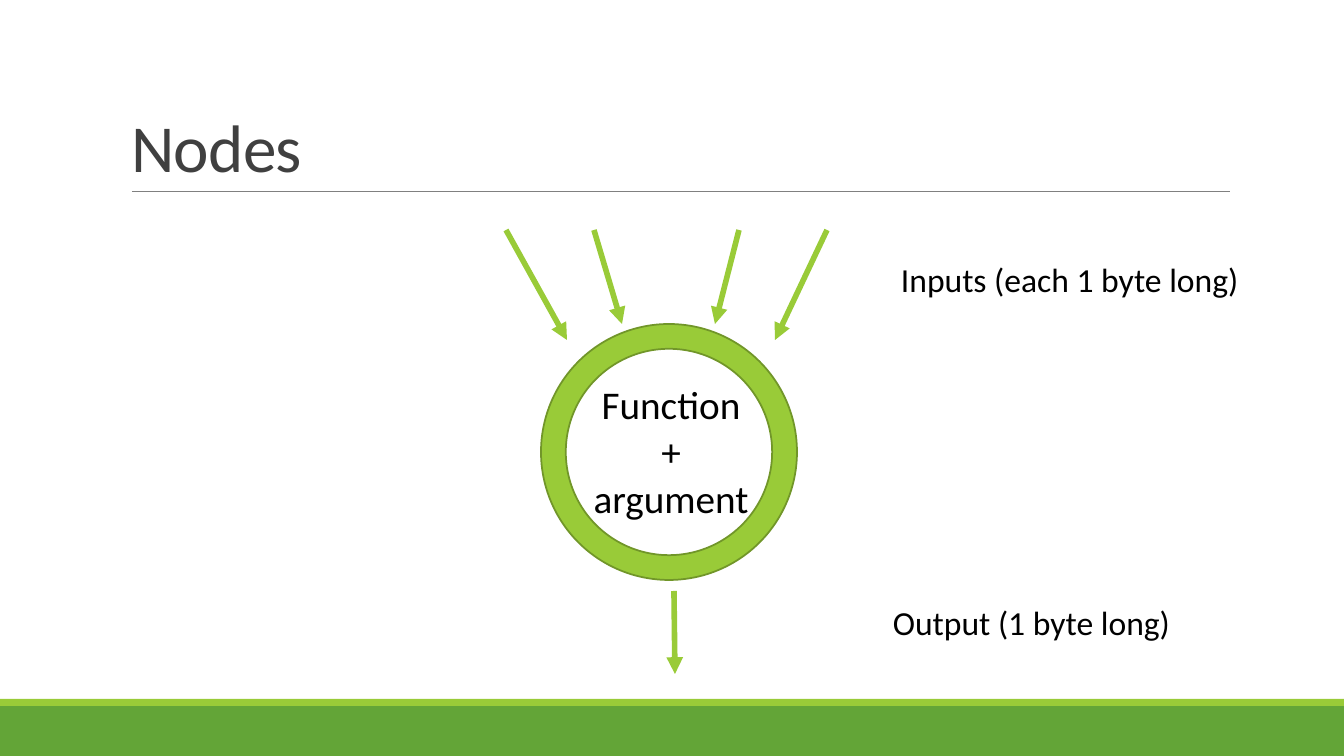
from lxml.etree import SubElement
from pptx import Presentation
from pptx.dml.color import RGBColor
from pptx.enum.shapes import MSO_CONNECTOR, MSO_SHAPE
from pptx.enum.text import MSO_ANCHOR, MSO_AUTO_SIZE, PP_ALIGN
from pptx.oxml.ns import qn
from pptx.util import Pt

EMU_PER_PX = 914400 / 100.8
WIDTH, HEIGHT = 1344, 756
GREEN = RGBColor(0x63, 0xA5, 0x37)
LIME = RGBColor(0x99, 0xCB, 0x38)
OLIVE = RGBColor(0x71, 0x96, 0x29)
GRAY = RGBColor(0x80, 0x80, 0x80)
CHARCOAL = RGBColor(0x40, 0x40, 0x40)
BLACK = RGBColor(0, 0, 0)


def px(*lengths):
    return [round(length * EMU_PER_PX) for length in lengths]


def write_text(frame, text, size, color=BLACK, align=PP_ALIGN.LEFT,
               line_spacing=None, tracking=None):
    frame.text = text
    for paragraph in frame.paragraphs:
        paragraph.alignment = align
        paragraph.line_spacing = line_spacing
        for run in paragraph.runs:
            run.font.name = "Calibri"
            run.font.size = Pt(size)
            run.font.color.rgb = color
            if tracking is not None:
                run.font._element.set("spc", str(round(tracking * 100)))


class NodeSlide:
    """Draws styled elements on one title-only slide."""

    def __init__(self, presentation):
        self.slide = presentation.slides.add_slide(presentation.slide_layouts[5])
        self.shapes = self.slide.shapes

    def title(self, text, left, top, width, height):
        title = self.shapes.title
        title.left, title.top, title.width, title.height = px(left, top, width, height)
        frame = title.text_frame
        frame.word_wrap = True
        frame.auto_size = MSO_AUTO_SIZE.NONE
        frame.vertical_anchor = MSO_ANCHOR.BOTTOM
        write_text(frame, text, 48, color=CHARCOAL, line_spacing=0.85, tracking=-0.5)

    def shape(self, kind, left, top, width, height, fill, outline=None):
        shape = self.shapes.add_shape(kind, *px(left, top, width, height))
        shape.shadow.inherit = False
        shape.fill.solid()
        shape.fill.fore_color.rgb = fill
        if outline is None:
            shape.line.fill.background()
        else:
            shape.line.color.rgb = outline
            shape.line.width = Pt(1.25)
        return shape

    def line(self, start, end, color, weight):
        connector = self.shapes.add_connector(MSO_CONNECTOR.STRAIGHT, *px(*start, *end))
        connector.line.color.rgb = color
        connector.line.width = Pt(weight)
        SubElement(connector._element.spPr, qn("a:effectLst"))
        return connector

    def arrow(self, start, end):
        connector = self.line(start, end, LIME, 4)
        SubElement(connector.line._get_or_add_ln(), qn("a:tailEnd"), type="triangle")

    def label(self, text, left, top, width, height, size=24, align=PP_ALIGN.LEFT):
        box = self.shapes.add_textbox(*px(left, top, width, height))
        box.text_frame.word_wrap = False
        box.text_frame.auto_size = MSO_AUTO_SIZE.SHAPE_TO_FIT_TEXT
        write_text(box.text_frame, text, size, align=align)


def main():
    presentation = Presentation()
    presentation.slide_width, presentation.slide_height = px(WIDTH, HEIGHT)
    nodes = NodeSlide(presentation)

    nodes.shape(MSO_SHAPE.RECTANGLE, 0, 706, WIDTH, 50, GREEN)
    nodes.shape(MSO_SHAPE.RECTANGLE, 0, 699, WIDTH, 7, LIME)
    nodes.line((132, 191), (1230, 191), GRAY, 0.5)
    nodes.title("Nodes", 121, 31, 1109, 160)

    ring = nodes.shape(MSO_SHAPE.DONUT, 541, 324, 256, 256, LIME, outline=OLIVE)
    ring.adjustments[0] = 0.097

    input_top = 230
    for start_x, end_x, end_y in [(506, 567, 340), (594, 622, 324),
                                  (739, 715, 324), (827, 775, 340)]:
        nodes.arrow((start_x, input_top), (end_x, end_y))
    nodes.arrow((674, 591), (675, 674))

    nodes.label("Inputs (each 1 byte long)", 891, 254, 361, 50)
    nodes.label("Function\n+\nargument", 583, 375, 176, 152, size=28,
                align=PP_ALIGN.CENTER)
    nodes.label("Output (1 byte long)", 883, 597, 300, 50)

    presentation.save("out.pptx")


if __name__ == "__main__":
    main()
